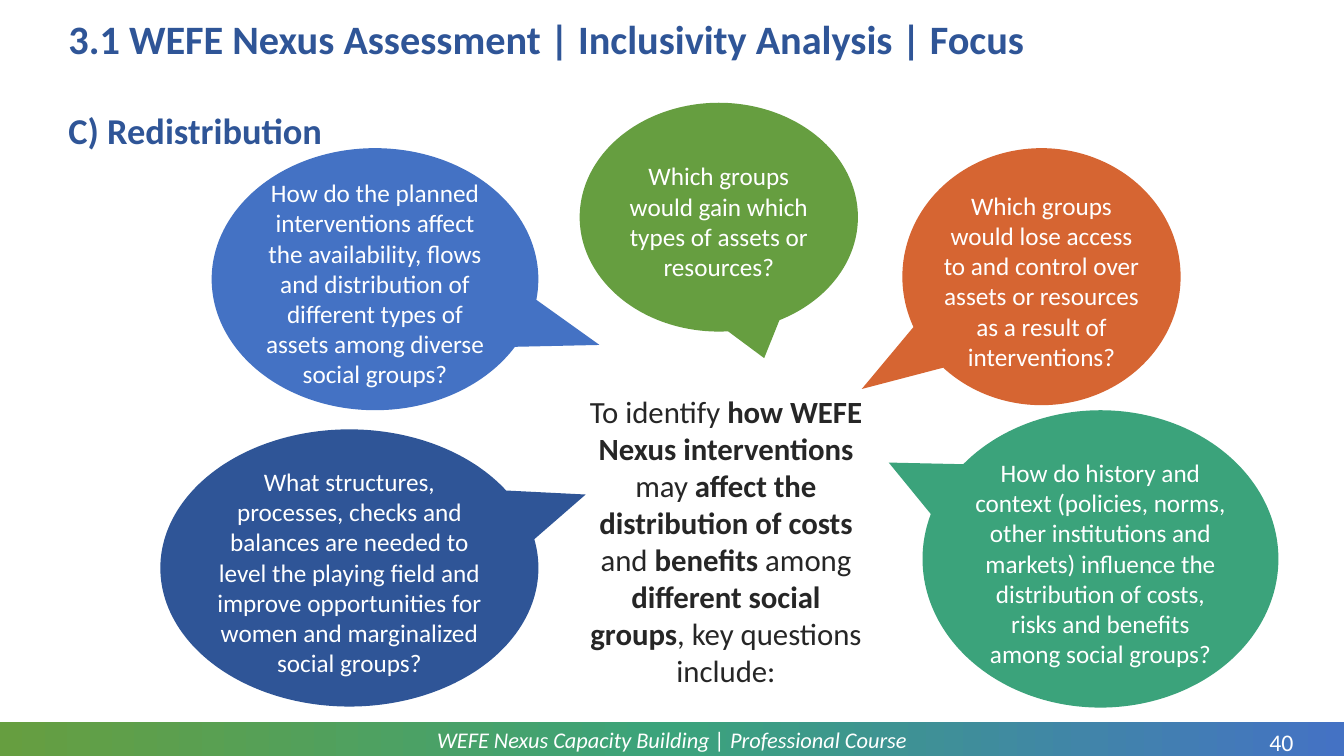
import copy
from dataclasses import dataclass

import pptx
import pptx.dml.color
import pptx.enum.shapes
import pptx.enum.text
import pptx.oxml.ns
import pptx.util

ALIGN = pptx.enum.text.PP_ALIGN
ANCHOR = pptx.enum.text.MSO_ANCHOR
SHAPE = pptx.enum.shapes.MSO_SHAPE

SCALE = 9144  # EMU per px, 100 px to the inch
FONT = "Calibri"
COLORS = {
    "navy": "2F5597",
    "blue": "4472C4",
    "green": "669E40",
    "orange": "D66532",
    "teal": "3BA37B",
    "ink": "262626",
    "white": "FFFFFF",
}


@dataclass
class Area:
    left: int
    top: int
    width: int
    height: int

    def emu(self) -> list[int]:
        return [side * SCALE for side in (self.left, self.top, self.width, self.height)]


@dataclass
class Label:
    area: Area
    text: str
    size: float
    color: str
    align: ALIGN = ALIGN.LEFT
    bold: bool = False
    italic: bool = False
    line_spacing: float = 1.0
    inset: bool = True


@dataclass
class Callout:
    area: Area
    tip: tuple[float, float]
    color: str
    question: str


LABELS = [
    Label(Area(92, 717, 1149, 33), "WEFE Nexus Capacity Building | Professional Course",
          16, "white", ALIGN.CENTER, italic=True),
    Label(Area(1241, 722, 60, 28), "40", 17, "white", ALIGN.CENTER, inset=False),
    Label(Area(58, 13, 1215, 56), "3.1 WEFE Nexus Assessment | Inclusivity Analysis | Focus",
          28.8, "navy", bold=True, line_spacing=0.9),
    Label(Area(58, 102, 1198, 59), "C) Redistribution", 26, "navy", bold=True, line_spacing=0.9),
]

CALLOUTS = [
    Callout(Area(159, 426, 375, 275), (0.625, -0.265), "navy",
            "What structures, processes, checks and balances are needed to level the playing "
            "field and improve opportunities for women and marginalized social groups?"),
    Callout(Area(210, 147, 324, 260), (0.687, 0.251), "blue",
            "How do the planned interventions affect the availability, flows and distribution "
            "of different types of assets among diverse social groups?"),
    Callout(Area(575, 102, 276, 227), (0.163, 0.616), "green",
            "Which groups would gain which types of assets or resources?"),
    Callout(Area(895, 147, 276, 255), (-0.646, 0.437), "orange",
            "Which groups would lose access to and control over assets or resources "
            "as a result of interventions?"),
    Callout(Area(915, 407, 353, 295), (-0.595, -0.324), "teal",
            "How do history and context (policies, norms, other institutions and markets) "
            "influence the distribution of costs, risks and benefits among social groups?"),
]

# Plain and bold spans alternate, starting with plain.
PURPOSE = [
    "To identify ", "how WEFE Nexus interventions", " may ",
    "affect the distribution of costs ", "and ", "benefits", " among ",
    "different social groups", ", key questions include:",
]


def rgb(name: str) -> pptx.dml.color.RGBColor:
    return pptx.dml.color.RGBColor.from_string(COLORS[name])


def style_font(font, size: float, color: str) -> None:
    font.name = FONT
    font.size = pptx.util.Pt(size)
    font.color.rgb = rgb(color)


def set_insets(frame, left: int, top: int, right: int, bottom: int) -> None:
    frame.margin_left, frame.margin_top = left * SCALE, top * SCALE
    frame.margin_right, frame.margin_bottom = right * SCALE, bottom * SCALE


def add_plain_shape(page, kind: SHAPE, area: Area):
    """Add a preset shape with neither line nor shadow."""
    shape = page.shapes.add_shape(kind, *area.emu())
    shape.shadow.inherit = False
    shape.line.fill.background()
    return shape


def add_footer_bar(page) -> None:
    bar = add_plain_shape(page, SHAPE.RECTANGLE, Area(0, 716, 1333, 34))
    bar.fill.gradient()
    bar.fill.gradient_angle = 0
    stop_list = bar._element.spPr.find(".//" + pptx.oxml.ns.qn("a:gsLst"))
    stop_list.insert(1, copy.deepcopy(stop_list[0]))
    for stop, position, color in zip(bar.fill.gradient_stops, (0, 0.5, 1), ("green", "teal", "blue")):
        stop.position = position
        stop.color.rgb = rgb(color)


def add_label(page, label: Label) -> None:
    frame = page.shapes.add_textbox(*label.area.emu()).text_frame
    frame.word_wrap = True
    frame.vertical_anchor = ANCHOR.MIDDLE
    if not label.inset:
        set_insets(frame, 0, 0, 0, 0)
    para = frame.paragraphs[0]
    para.text = label.text
    para.alignment = label.align
    para.line_spacing = label.line_spacing
    style_font(para.font, label.size, label.color)
    para.font.bold = label.bold
    para.font.italic = label.italic


def add_purpose(page) -> None:
    frame = page.shapes.add_textbox(*Area(574, 385, 292, 306).emu()).text_frame
    frame.word_wrap = True
    para = frame.paragraphs[0]
    para.alignment = ALIGN.CENTER
    style_font(para.font, 22, "ink")
    for index, words in enumerate(PURPOSE):
        span = para.add_run()
        span.text = words
        span.font.bold = index % 2 == 1


def add_callout(page, callout: Callout) -> None:
    bubble = add_plain_shape(page, SHAPE.OVAL_CALLOUT, callout.area)
    bubble.fill.solid()
    bubble.fill.fore_color.rgb = rgb(callout.color)
    for index, offset in enumerate(callout.tip):
        bubble.adjustments[index] = offset
    frame = bubble.text_frame
    frame.word_wrap = True
    frame.vertical_anchor = ANCHOR.MIDDLE
    set_insets(frame, 0, 8, 0, 0)
    para = frame.paragraphs[0]
    para.text = callout.question
    para.alignment = ALIGN.CENTER
    style_font(para.font, 18, "white")


def main() -> None:
    deck = pptx.Presentation()
    deck.slide_width, deck.slide_height = 1333 * SCALE, 750 * SCALE
    page = deck.slides.add_slide(deck.slide_layouts[6])
    add_footer_bar(page)
    for label in LABELS:
        add_label(page, label)
    add_purpose(page)
    for callout in CALLOUTS:
        add_callout(page, callout)
    deck.save("out.pptx")


if __name__ == "__main__":
    main()
